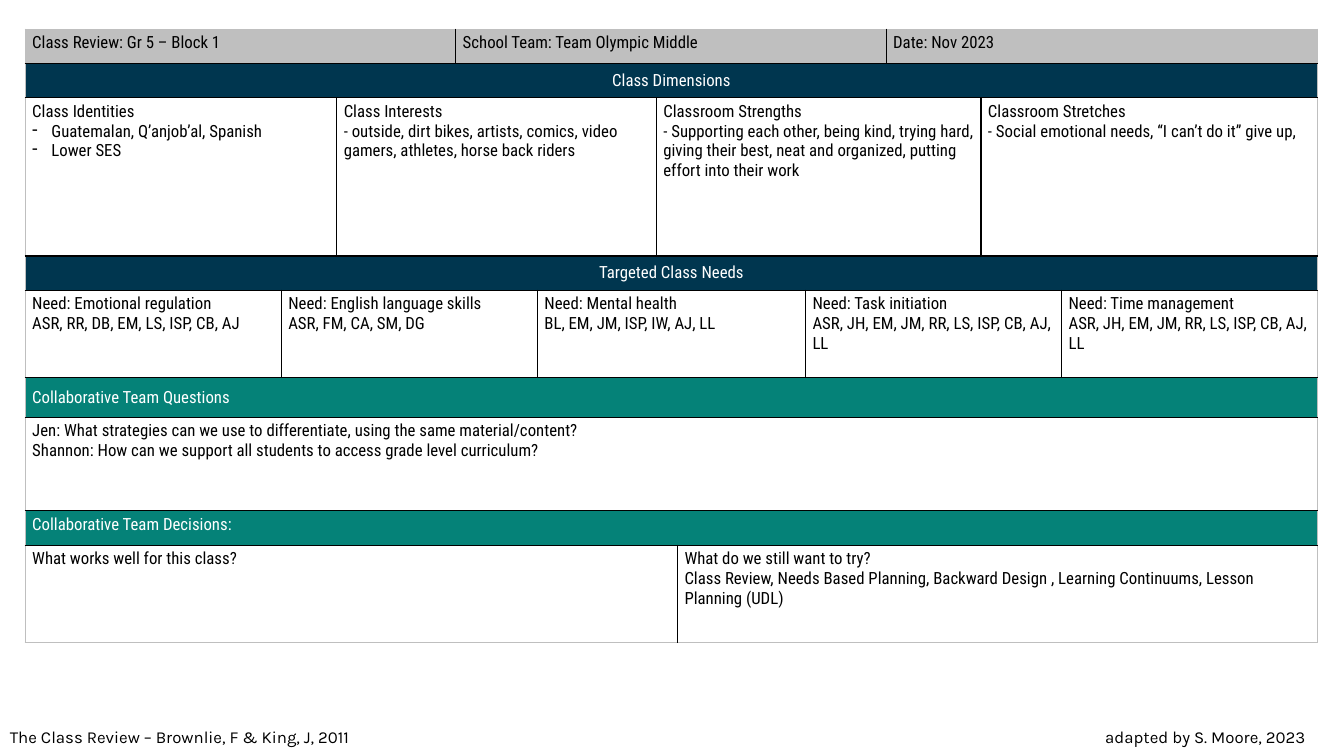
"""Build a one-slide class review planning table."""
import pptx
import pptx.dml.color
import pptx.enum.text
import pptx.oxml
import pptx.oxml.ns
import pptx.util
from pptx.util import Inches

BLACK, WHITE, GREY = "000000", "FFFFFF", "BFBFBF"
NAVY, TEAL = "00364F", "058278"
MIDDLE = pptx.enum.text.MSO_ANCHOR.MIDDLE
CENTER = pptx.enum.text.PP_ALIGN.CENTER

COLUMN_WIDTHS = [2.54, 0.55, 1.18, 0.81, 1.18, 0.21, 1.27, 0.8, 0.94, 0.8, 2.54]
CELL_FORMAT = {
    "margin_left": Inches(0.07),
    "margin_right": Inches(0.07),
    "margin_top": Inches(0.04),
    "margin_bottom": Inches(0.04),
}
HEADER = {"fill": GREY, "color": BLACK}
BODY = {"fill": WHITE, "color": BLACK}
BANNER = {"fill": NAVY, "color": WHITE, "anchor": MIDDLE, "align": CENTER}
QUESTIONS = {"fill": TEAL, "color": WHITE, "anchor": MIDDLE}
DECISIONS = {"fill": TEAL, "color": WHITE}

REVIEW_ROWS = [
    (0.34, HEADER, [
        (3, ["Class Review: Gr 5 – Block 1"]),
        (5, ["School Team: Team Olympic Middle"]),
        (3, ["Date: Nov 2023"]),
    ]),
    (0.34, BANNER, [(11, ["Class Dimensions"])]),
    (1.57, BODY, [
        (2, ["Class Identities", "• Guatemalan, Q’anjob’al, Spanish", "• Lower SES"]),
        (3, ["Class Interests",
             "- outside, dirt bikes, artists, comics, video gamers, athletes, "
             "horse back riders"]),
        (4, ["Classroom Strengths",
             "- Supporting each other, being kind, trying hard, giving their best, "
             "neat and organized, putting effort into their work"]),
        (2, ["Classroom Stretches",
             "- Social emotional needs, “I can’t do it” give up,"]),
    ]),
    (0.34, BANNER, [(11, ["Targeted Class Needs"])]),
    (0.87, BODY, [
        (1, ["Need: Emotional regulation", "ASR, RR, DB, EM, LS, ISP, CB, AJ"]),
        (3, ["Need: English language skills", "ASR, FM, CA, SM, DG"]),
        (3, ["Need: Mental health", "BL, EM, JM, ISP, IW, AJ, LL"]),
        (3, ["Need: Task initiation", "ASR, JH, EM, JM, RR, LS, ISP, CB, AJ, LL"]),
        (1, ["Need: Time management", "ASR, JH, EM, JM, RR, LS, ISP, CB, AJ, LL"]),
    ]),
    (0.39, QUESTIONS, [(11, ["Collaborative Team Questions"])]),
    (0.93, BODY, [
        (11, ["Jen: What strategies can we use to differentiate, using the same "
              "material/content?",
              "Shannon: How can we support all students to access grade level "
              "curriculum?"]),
    ]),
    (0.34, DECISIONS, [(11, ["Collaborative Team Decisions:"])]),
    (0.97, BODY, [
        (6, ["What works well for this class?"]),
        (5, ["What do we still want to try?",
             "Class Review, Needs Based Planning, Backward Design , Learning "
             "Continuums, Lesson Planning (UDL)"]),
    ]),
]


def rgb(code):
    """Return the colour for a hex string."""
    return pptx.dml.color.RGBColor.from_string(code)


def element(xml):
    """Return a DrawingML element parsed from xml with an open namespace slot."""
    return pptx.oxml.parse_xml(xml.format(ns=pptx.oxml.ns.nsdecls("a")))


def write_run(paragraph, text, typeface, color):
    """Add a 12 point run to a paragraph."""
    run = paragraph.add_run()
    run.text = text
    run.font.size = pptx.util.Pt(12)
    run.font.name = typeface
    run.font.color.rgb = rgb(color)


def add_dash(paragraph):
    """Give a paragraph a hanging dash bullet."""
    properties = paragraph._p.get_or_add_pPr()
    properties.set("marL", str(Inches(0.19)))
    properties.set("indent", str(-Inches(0.19)))
    properties.append(element('<a:buChar {ns} char="-"/>'))


def set_borders(cell, colors):
    """Draw the left, right, top and bottom borders of a cell."""
    for position, (side, color) in enumerate(zip("LRTB", colors)):
        border = element(
            f'<a:ln{side} {{ns}} w="12700"><a:solidFill>'
            f'<a:srgbClr val="{color}"/></a:solidFill></a:ln{side}>')
        cell._tc.get_or_add_tcPr().insert(position, border)


def write_cell(cell, lines, style):
    """Fill a cell with its paragraphs."""
    for name, value in CELL_FORMAT.items():
        setattr(cell, name, value)
    if "anchor" in style:
        cell.vertical_anchor = style["anchor"]
    frame = cell.text_frame
    for index, line in enumerate(lines):
        paragraph = frame.add_paragraph() if index else frame.paragraphs[0]
        if "align" in style:
            paragraph.alignment = style["align"]
        if line.startswith("• "):
            add_dash(paragraph)
        write_run(paragraph, line.removeprefix("• "), "Roboto Condensed", style["color"])


def add_review_table(slide):
    """Add the class review table with its merged cells."""
    row_count, column_count = len(REVIEW_ROWS), len(COLUMN_WIDTHS)
    height = sum(row[0] for row in REVIEW_ROWS)
    review = slide.shapes.add_table(
        row_count, column_count, Inches(0.25), Inches(0.29),
        Inches(sum(COLUMN_WIDTHS)), Inches(height)).table
    review.first_row = review.horz_banding = False
    for column, width in zip(review.columns, COLUMN_WIDTHS):
        column.width = Inches(width)
    for row, (row_height, style, sections) in enumerate(REVIEW_ROWS):
        review.rows[row].height = Inches(row_height)
        start = 0
        for span, lines in sections:
            end = start + span
            edges = (start == 0, end == column_count, row == 0, row == row_count - 1)
            colors = [GREY if outer else BLACK for outer in edges]
            for column in range(start, end):
                cell = review.cell(row, column)
                cell.fill.solid()
                cell.fill.fore_color.rgb = rgb(style["fill"])
                set_borders(cell, colors)
            section = review.cell(row, start)
            if span > 1:
                section.merge(review.cell(row, end - 1))
            write_cell(section, lines, style)
            start = end


def add_credit(slide, left_text, right_text):
    """Add the credit line with its second part at a right tab."""
    credit = slide.shapes.add_textbox(0, Inches(7.16), Inches(13.33), Inches(0.3))
    credit.text_frame.word_wrap = True
    paragraph = credit.text_frame.paragraphs[0]
    paragraph._p.get_or_add_pPr().append(element(
        f'<a:tabLst {{ns}}><a:tab pos="{Inches(12.85)}" algn="r"/></a:tabLst>'))
    write_run(paragraph, f"{left_text}\t{right_text}", "Karla", BLACK)


def main():
    """Build and save the slide."""
    deck = pptx.Presentation()
    deck.slide_width, deck.slide_height = Inches(13.33), Inches(7.5)
    slide = deck.slides.add_slide(deck.slide_layouts[6])
    add_review_table(slide)
    add_credit(slide, "The Class Review – Brownlie, F & King, J, 2011",
               "adapted by S. Moore, 2023")
    deck.save("out.pptx")


if __name__ == "__main__":
    main()
